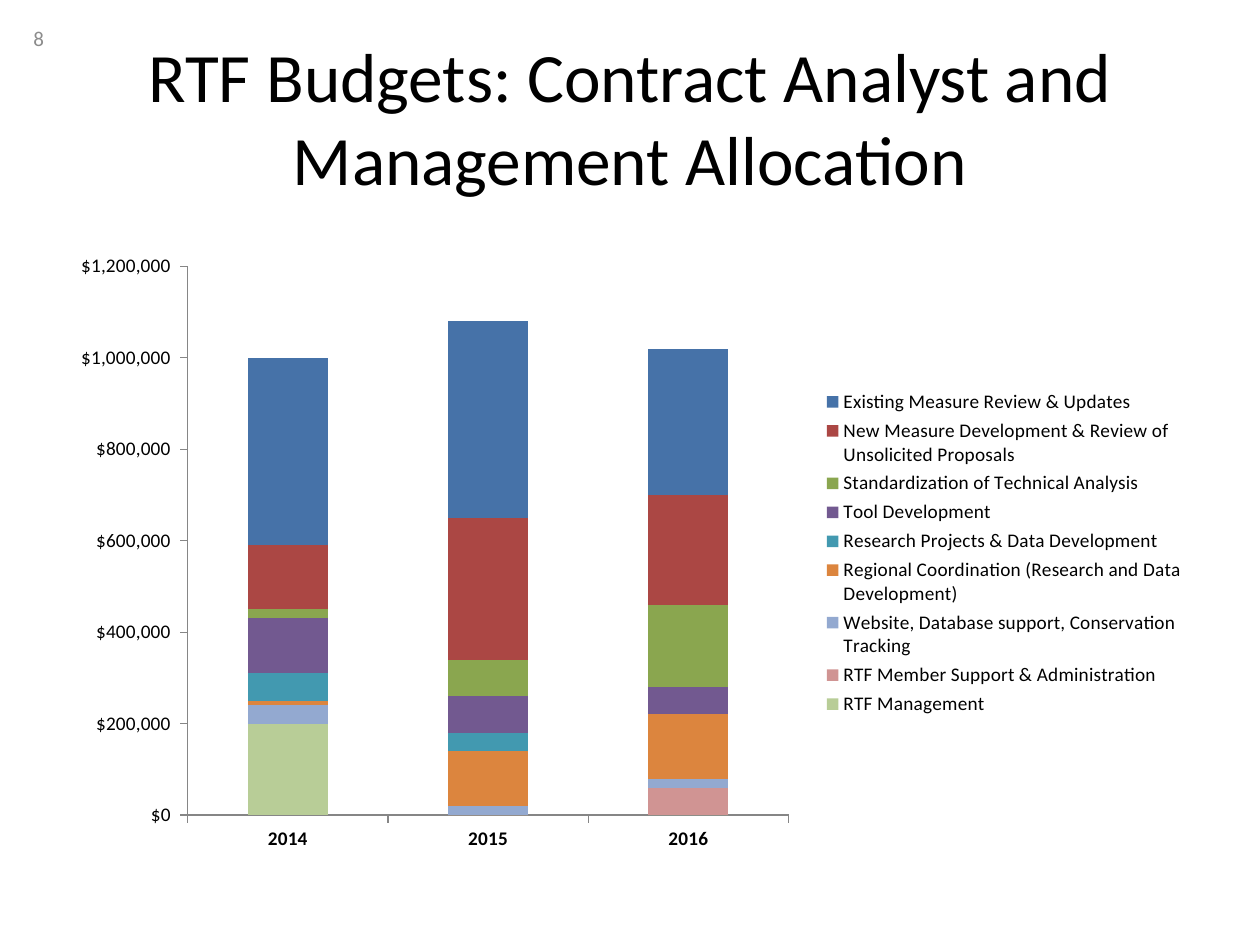
from typing import NamedTuple

from lxml.etree import SubElement
from pptx import Presentation
from pptx.chart.data import CategoryChartData
from pptx.dml.color import RGBColor
from pptx.enum.chart import XL_CHART_TYPE, XL_LEGEND_POSITION, XL_TICK_MARK
from pptx.enum.text import MSO_ANCHOR, MSO_AUTO_SIZE, PP_ALIGN
from pptx.oxml.ns import qn
from pptx.util import Pt

FONT = "Calibri"
AXIS_GRAY = "868686"


class Box(NamedTuple):
    """Place and size in points."""
    left: float
    top: float
    width: float
    height: float

    def lengths(self) -> list:
        return [Pt(value) for value in self]


class Budget(NamedTuple):
    name: str
    color: str
    thousands: tuple


YEARS = ("2014", "2015", "2016")
BUDGETS = (
    Budget("RTF Management", "B8CD97", (200, 0, 0)),
    Budget("RTF Member Support & Administration", "D09493", (0, 0, 60)),
    Budget("Website, Database support, Conservation Tracking", "93A9D0", (40, 20, 20)),
    Budget("Regional Coordination (Research and Data Development)", "DC853E", (10, 120, 140)),
    Budget("Research Projects & Data Development", "4299B0", (60, 40, 0)),
    Budget("Tool Development", "725990", (120, 80, 60)),
    Budget("Standardization of Technical Analysis", "8AA64F", (20, 80, 180)),
    Budget("New Measure Development & Review of Unsolicited Proposals", "AB4744", (140, 310, 240)),
    Budget("Existing Measure Review & Updates", "4672A8", (410, 430, 320)),
)


def rgb(color: str) -> RGBColor:
    return RGBColor.from_string(color)


def format_font(font, size: float, color: str = "000000", bold: bool = False) -> None:
    font.name = FONT
    font.size = Pt(size)
    font.bold = bold
    font.color.rgb = rgb(color)


def write_text(shape, text: str, *, size: float, color: str = "000000",
               align=PP_ALIGN.LEFT) -> None:
    frame = shape.text_frame
    frame.text = text
    frame.word_wrap = True
    frame.auto_size = MSO_AUTO_SIZE.NONE
    frame.vertical_anchor = MSO_ANCHOR.MIDDLE
    paragraph = frame.paragraphs[0]
    paragraph.alignment = align
    format_font(paragraph.runs[0].font, size, color)


def set_layout(parent, follows: str, box: Box, inner: bool = False) -> None:
    """Place a chart part by fractions of the chart area."""
    for old in parent.findall(qn("c:layout")):
        parent.remove(old)
    layout = SubElement(parent, qn("c:layout"))
    manual = SubElement(layout, qn("c:manualLayout"))
    settings = [("layoutTarget", "inner")] if inner else []
    settings += [("xMode", "edge"), ("yMode", "edge")]
    settings += list(zip("xywh", box))
    for tag, value in settings:
        SubElement(manual, qn(f"c:{tag}")).set("val", str(value))
    before = parent.find(qn(follows)) if follows else None
    if before is None:
        parent.insert(0, layout)
    else:
        before.addnext(layout)


def format_axis(axis, bold: bool = False) -> None:
    axis.has_major_gridlines = False
    axis.major_tick_mark = XL_TICK_MARK.OUTSIDE
    axis.minor_tick_mark = XL_TICK_MARK.NONE
    axis.format.line.color.rgb = rgb(AXIS_GRAY)
    axis.format.line.width = Pt(0.75)
    format_font(axis.tick_labels.font, 11, bold=bold)


def add_budget_chart(slide, box: Box) -> None:
    data = CategoryChartData()
    data.categories = YEARS
    for budget in BUDGETS:
        data.add_series(budget.name, [value * 1000 for value in budget.thousands])
    chart = slide.shapes.add_chart(
        XL_CHART_TYPE.COLUMN_STACKED, *box.lengths(), data).chart
    format_font(chart.font, 10)
    chart.has_title = False

    plot = chart.plots[0]
    plot.overlap = 100
    plot.gap_width = 150
    plot.vary_by_categories = False
    for series, budget in zip(plot.series, BUDGETS):
        series.format.fill.solid()
        series.format.fill.fore_color.rgb = rgb(budget.color)

    format_axis(chart.category_axis, bold=True)
    values = chart.value_axis
    format_axis(values)
    values.minimum_scale = 0
    values.maximum_scale = 1_200_000
    values.major_unit = 200_000
    values.tick_labels.number_format = r'"$"#,##0_);\("$"#,##0\)'
    values.tick_labels.number_format_is_linked = False

    chart.has_legend = True
    legend = chart.legend
    legend.position = XL_LEGEND_POSITION.RIGHT
    legend.include_in_layout = False
    format_font(legend.font, 11)

    plot_area = chart.element.find(".//" + qn("c:plotArea"))
    set_layout(plot_area, "", Box(0.11, 0.04, 0.53, 0.88), inner=True)
    legend_element = chart.element.find(".//" + qn("c:legend"))
    set_layout(legend_element, "c:legendPos", Box(0.67, 0.23, 0.32, 0.54))


def place(shape, box: Box) -> None:
    shape.left, shape.top, shape.width, shape.height = box.lengths()


def main() -> None:
    presentation = Presentation()
    presentation.slide_width, presentation.slide_height = Pt(720), Pt(540)
    slide = presentation.slides.add_slide(presentation.slide_layouts[5])

    title = slide.shapes.title
    place(title, Box(36, 21.6, 648, 90))
    write_text(title, "RTF Budgets: Contract Analyst and Management Allocation",
               size=39.6, align=PP_ALIGN.CENTER)

    number = slide.shapes.add_textbox(*Box(12, 7.2, 168, 28.8).lengths())
    write_text(number, "8", size=12, color="8C8C8C")

    add_budget_chart(slide, Box(36, 138, 648, 356.4))
    presentation.save("out.pptx")


if __name__ == "__main__":
    main()
